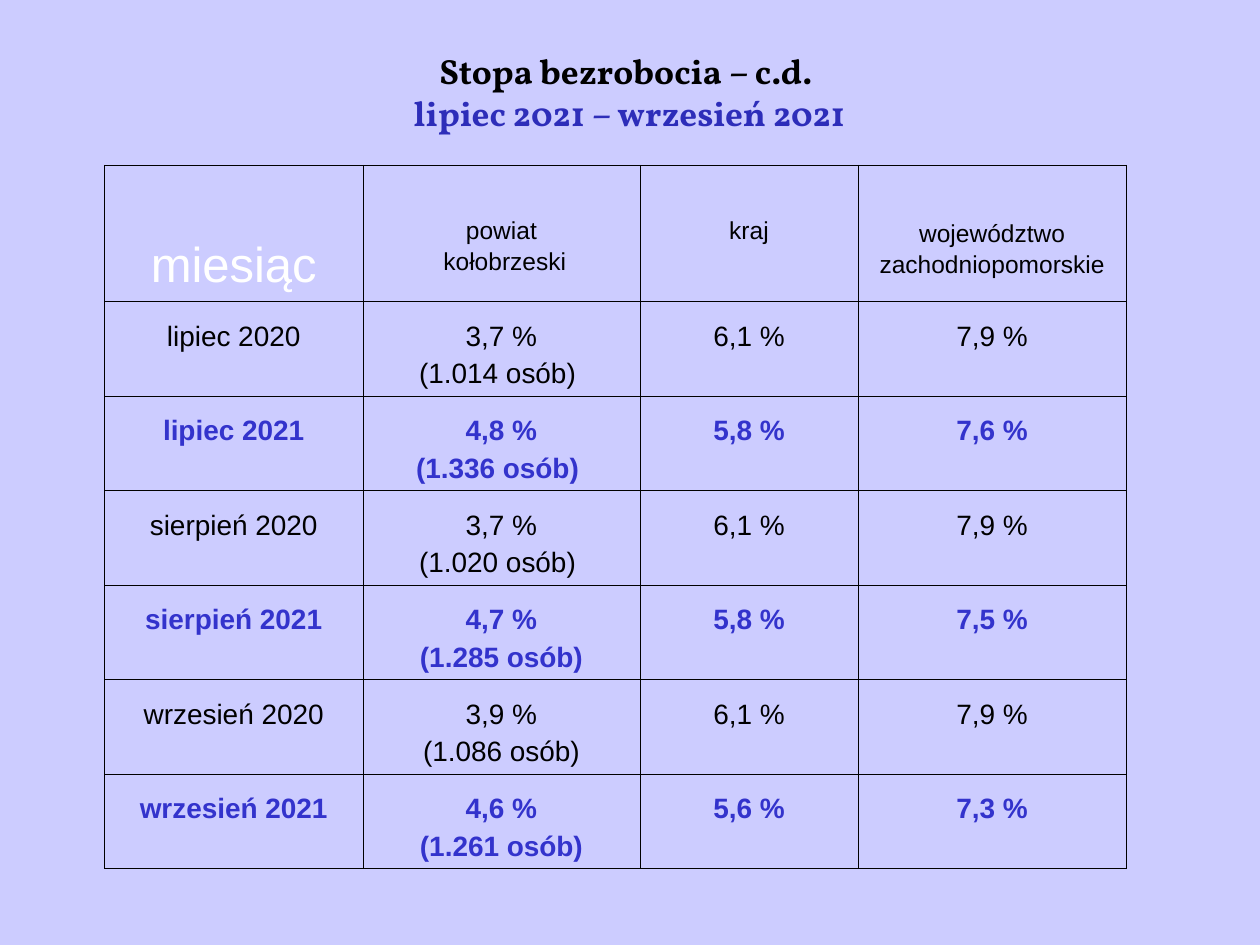
import pptx
import pptx.util
import pptx.dml.color
import pptx.enum.text
import pptx.oxml
import pptx.oxml.ns

Inches, Pt = pptx.util.Inches, pptx.util.Pt
RGBColor = pptx.dml.color.RGBColor
CENTER = pptx.enum.text.PP_ALIGN.CENTER

BACKGROUND = RGBColor(0xCC, 0xCC, 0xFF)
BLACK = RGBColor(0, 0, 0)
WHITE = RGBColor(0xFF, 0xFF, 0xFF)
TITLE_BLUE = RGBColor(0x2D, 0x2D, 0xB9)
ROW_BLUE = RGBColor(0x33, 0x33, 0xCC)

# Content
TITLE = [("Stopa bezrobocia – c.d. ", BLACK), ("lipiec 2021 – wrzesień 2021", TITLE_BLUE)]
# Heading, size, colour, top margin, line spacing
HEADINGS = [
    ("miesiąc", 28, WHITE, 0.58, 1),
    ("powiat\n kołobrzeski", 14, BLACK, 0.45, 0.81),
    ("kraj", 14, BLACK, 0.45, 0.81),
    ("województwo\nzachodniopomorskie", 14, BLACK, 0.47, 0.81),
]
RATES = [
    ("lipiec 2020", "3,7 %\n(1.014 osób) ", "6,1 %", "7,9 %"),
    ("lipiec 2021", "4,8 %\n(1.336 osób) ", "5,8 %", "7,6 %"),
    ("sierpień 2020", "3,7 %\n(1.020 osób) ", "6,1 %", "7,9 %"),
    ("sierpień 2021", "4,7 %\n(1.285 osób)", "5,8 %", "7,5 %"),
    ("wrzesień 2020", "3,9 %\n(1.086 osób)", "6,1 %", "7,9 %"),
    ("wrzesień 2021", "4,6 %\n(1.261 osób)", "5,6 %", "7,3 %"),
]

# Table grid
LEFT, TOP = 0.83, 1.31
COLUMNS = [2.05, 2.2, 1.73, 2.13]
ROWS = [1.08] + [0.75] * len(RATES)
INNER, OUTER = 0.11, 0.23


def style_run(run, font, size, color, bold):
    run.font.name = font
    run.font.size = Pt(size)
    run.font.color.rgb = color
    run.font.bold = bold


def set_borders(cell, row, column):
    outside = {
        "L": column == 0,
        "R": column == len(COLUMNS) - 1,
        "T": row == 0,
        "B": False,
    }
    properties = cell._tc.get_or_add_tcPr()
    for position, (side, is_outer) in enumerate(outside.items()):
        width = Pt(OUTER if is_outer else INNER)
        properties.insert(position, pptx.oxml.parse_xml(
            f'<a:ln{side} {pptx.oxml.ns.nsdecls("a")} w="{width}"><a:solidFill>'
            f'<a:srgbClr val="{BLACK}"/></a:solidFill></a:ln{side}>'))


def fill_cell(cell, text, size, color, bold, top, spacing, before):
    cell.fill.background()
    cell.margin_top = Inches(top)
    cell.text_frame.text = text
    for paragraph in cell.text_frame.paragraphs:
        paragraph.alignment = CENTER
        paragraph.line_spacing = spacing
        paragraph.space_before = Pt(before)
        for run in paragraph.runs:
            style_run(run, "Arial", size, color, bold)


def main():
    deck = pptx.Presentation()
    deck.slide_width, deck.slide_height = Inches(10), Inches(7.5)
    slide = deck.slides.add_slide(deck.slide_layouts[5])
    slide.background.fill.solid()
    slide.background.fill.fore_color.rgb = BACKGROUND

    # Title
    title = slide.shapes.title
    title.left, title.top = Inches(0.5), Inches(0.14)
    title.width, title.height = Inches(8.99), Inches(1.17)
    title.text_frame.text = "\v".join(line for line, _ in TITLE)
    title.text_frame.auto_size = pptx.enum.text.MSO_AUTO_SIZE.NONE
    title.text_frame.vertical_anchor = pptx.enum.text.MSO_ANCHOR.MIDDLE
    heading = title.text_frame.paragraphs[0]
    heading.alignment = CENTER
    for run, (_, color) in zip(heading.runs, TITLE):
        style_run(run, "Vollkorn", 20, color, True)

    # Table of unemployment rates
    table = slide.shapes.add_table(
        len(ROWS), len(COLUMNS), Inches(LEFT), Inches(TOP),
        Inches(sum(COLUMNS)), Inches(sum(ROWS))).table
    table.first_row = table.horz_banding = False
    for column, width in zip(table.columns, COLUMNS):
        column.width = Inches(width)
    for row, height in zip(table.rows, ROWS):
        row.height = Inches(height)

    for column, (text, size, color, top, spacing) in enumerate(HEADINGS):
        fill_cell(table.cell(0, column), text, size, color, False, top, spacing, 5)
    for row, rates in enumerate(RATES, 1):
        current_year = rates[0].endswith("2021")
        color = ROW_BLUE if current_year else BLACK
        for column, text in enumerate(rates):
            fill_cell(table.cell(row, column), text, 16, color, current_year, 0.2, 0.81, 7)

    for row in range(len(ROWS)):
        for column in range(len(COLUMNS)):
            set_borders(table.cell(row, column), row, column)

    deck.save("out.pptx")


if __name__ == "__main__":
    main()
